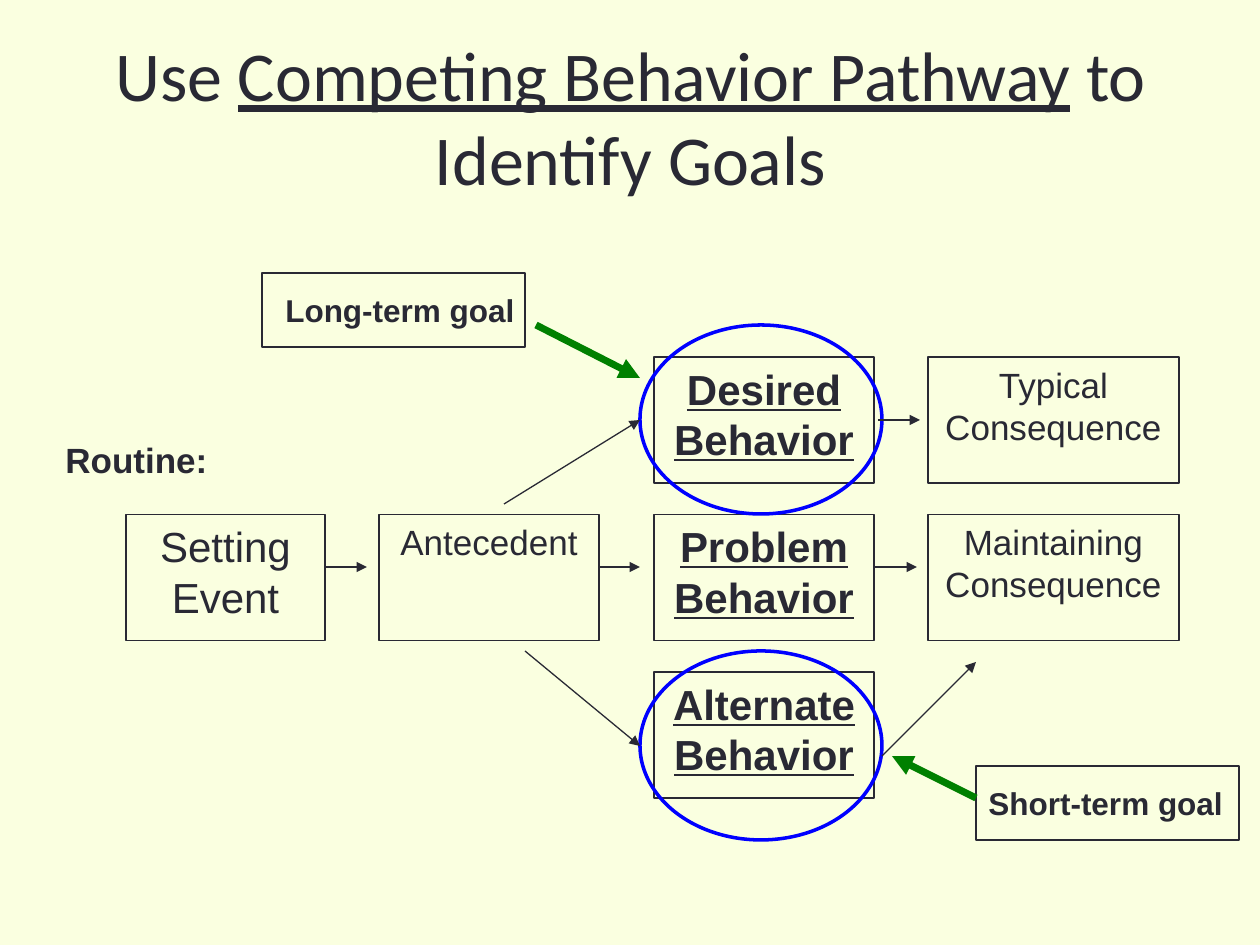
import pptx
import pptx.util
import pptx.dml.color
import pptx.enum.shapes
import pptx.enum.text
import pptx.oxml
import pptx.oxml.ns

PX = 914400 / 126
COLORS = {"paper": "FAFFE0", "ink": "292934", "ring": "0000FF", "goal": "008000"}
RGB = {name: pptx.dml.color.RGBColor.from_string(c) for name, c in COLORS.items()}
SHAPE = pptx.enum.shapes.MSO_SHAPE
ALIGN = pptx.enum.text.PP_ALIGN
ANCHOR = pptx.enum.text.MSO_ANCHOR


def emu(*lengths):
    return [pptx.util.Emu(round(v * PX)) for v in lengths]


def add_run(p, text, size, bold=False, underline=False, font="Arial"):
    r = p.add_run()
    r.text = text
    r.font.name = font
    r.font.size = pptx.util.Pt(size)
    r.font.bold = bold
    r.font.underline = underline
    r.font.color.rgb = RGB["ink"]


prs = pptx.Presentation()
prs.slide_width, prs.slide_height = emu(1260, 945)
s = prs.slides.add_slide(prs.slide_layouts[5])
s.background.fill.solid()
s.background.fill.fore_color.rgb = RGB["paper"]

# Title
title = s.shapes.title
title.left, title.top, title.width, title.height = emu(32, 21, 1197, 189)
tf = title.text_frame
tf.word_wrap = True
tf.vertical_anchor = ANCHOR.MIDDLE
p = tf.paragraphs[0]
p.alignment = ALIGN.CENTER
for text, underline in [("Use ", False), ("Competing Behavior Pathway", True),
                        (" to Identify Goals", False)]:
    add_run(p, text, 40, underline=underline, font="Calibri")

# Pathway boxes: three rows of equal height
BOX_H = 126
row_top = [357 + 157.5 * i for i in range(3)]
boxes = [
    ("Typical Consequence", 928, 0, 251, 20, False),
    ("Maintaining Consequence", 928, 1, 251, 20, False),
    ("Desired Behavior", 654, 0, 220, 24, True),
    ("Problem Behavior", 654, 1, 220, 24, True),
    ("Alternate Behavior", 654, 2, 220, 24, True),
    ("Antecedent", 379, 1, 220, 20, False),
    ("Setting Event", 126, 1, 199, 24, False),
]
for text, x, row, w, size, strong in boxes:
    sp = s.shapes.add_shape(SHAPE.RECTANGLE, *emu(x, row_top[row], w, BOX_H))
    sp.shadow.inherit = False
    sp.fill.background()
    sp.line.color.rgb = RGB["ink"]
    sp.line.width = pptx.util.Pt(0.75)
    tf = sp.text_frame
    tf.word_wrap = True
    tf.vertical_anchor = ANCHOR.TOP
    p = tf.paragraphs[0]
    p.alignment = ALIGN.CENTER
    add_run(p, text, size, bold=strong, underline=strong)

# Blue rings and goal frames
outlines = [
    (SHAPE.OVAL, 640, 651, 242, 189, "ring", 2),
    (SHAPE.OVAL, 640, 325, 242, 189, "ring", 2),
    (SHAPE.RECTANGLE, 262, 273, 263, 74, "ink", 1.5),
    (SHAPE.RECTANGLE, 976, 766, 263, 74, "ink", 1.5),
]
for kind, x, y, w, h, color, width in outlines:
    sp = s.shapes.add_shape(kind, *emu(x, y, w, h))
    sp.shadow.inherit = False
    sp.fill.background()
    sp.line.color.rgb = RGB[color]
    sp.line.width = pptx.util.Pt(width)

# Labels
labels = [
    ("Routine:", 53, 432, 441, 54, 20),
    ("Long-term goal", 273, 285, 283, 50, 18),
    ("Short-term goal", 976, 778, 283, 50, 18),
]
for text, x, y, w, h, size in labels:
    tf = s.shapes.add_textbox(*emu(x, y, w, h)).text_frame
    tf.word_wrap = True
    add_run(tf.paragraphs[0], text, size, bold=True)

# Arrows
arrows = [
    (325, 567, 367, 567, "ink", 0.75),
    (599, 567, 640, 567, "ink", 0.75),
    (875, 567, 917, 567, "ink", 0.75),
    (878, 420, 920, 420, "ink", 0.75),
    (504, 504, 640, 420, "ink", 0.75),
    (525, 651, 640, 746, "ink", 0.75),
    (882, 756, 976, 662, "ink", 0.75),
    (536, 325, 640, 378, "goal", 4),
    (976, 798, 892, 756, "goal", 4),
]
for x1, y1, x2, y2, color, width in arrows:
    line = s.shapes.add_connector(pptx.enum.shapes.MSO_CONNECTOR.STRAIGHT,
                                  *emu(x1, y1, x2, y2))
    line.line.color.rgb = RGB[color]
    line.line.width = pptx.util.Pt(width)
    head = pptx.oxml.parse_xml(
        f'<a:tailEnd {pptx.oxml.ns.nsdecls("a")} type="triangle"/>')
    line.line._get_or_add_ln().append(head)
    line._element.spPr.append(
        pptx.oxml.parse_xml(f'<a:effectLst {pptx.oxml.ns.nsdecls("a")}/>'))

prs.save("out.pptx")
